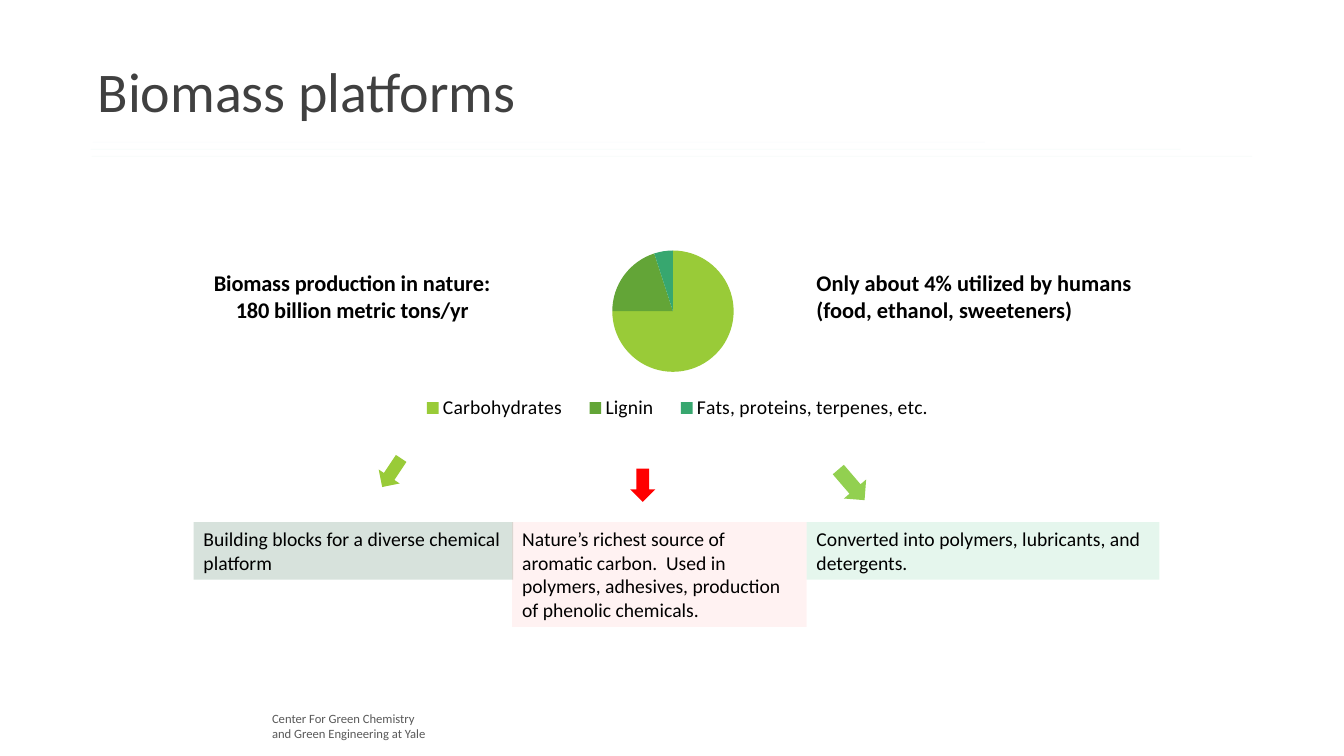
from lxml import etree
from pptx import Presentation
from pptx.chart.data import CategoryChartData
from pptx.dml.color import RGBColor
from pptx.enum.chart import XL_CHART_TYPE, XL_LEGEND_POSITION as LegendPos
from pptx.enum.shapes import MSO_CONNECTOR, MSO_SHAPE
from pptx.enum.text import MSO_ANCHOR, PP_ALIGN
from pptx.oxml.ns import qn
from pptx.util import Inches, Pt

BLACK = RGBColor(0x00, 0x00, 0x00)
DARK_GREY = RGBColor(0x40, 0x40, 0x40)
GREY = RGBColor(0x59, 0x59, 0x59)
LIME = RGBColor(0x99, 0xCB, 0x38)
GREEN = RGBColor(0x63, 0xA5, 0x37)
TEAL = RGBColor(0x37, 0xA7, 0x6F)
AQUA = RGBColor(0x44, 0xC1, 0xA3)
SKY = RGBColor(0x4E, 0xB3, 0xCF)
RED = RGBColor(0xFF, 0x00, 0x00)
LIGHT_GREEN = RGBColor(0x92, 0xD0, 0x50)
EMERALD = RGBColor(0x00, 0xB0, 0x50)
PALE_GREEN = RGBColor(0xD7, 0xE2, 0xDC)
FONT = "Calibri"


def write(shape, text, size, color, bold=False, wrap=True):
    frame = shape.text_frame
    frame.word_wrap = wrap
    frame.text = text
    for para in frame.paragraphs:
        para.alignment = PP_ALIGN.LEFT
        for span in para.runs:
            span.font.name = FONT
            span.font.size = Pt(size)
            span.font.bold = bold
            span.font.color.rgb = color


def place(element, index, **fractions):
    """Give a chart part a manual layout in fractions of the chart."""
    for old in element.findall(qn("c:layout")):
        element.remove(old)
    layout = etree.Element(qn("c:layout"))
    manual = etree.SubElement(layout, qn("c:manualLayout"))
    if element.tag == qn("c:plotArea"):
        etree.SubElement(manual, qn("c:layoutTarget"), val="inner")
    for mode in ("xMode", "yMode"):
        etree.SubElement(manual, qn("c:" + mode), val="edge")
    for name, value in fractions.items():
        etree.SubElement(manual, qn("c:" + name), val=str(value))
    element.insert(index, layout)


deck = Presentation()
deck.slide_width, deck.slide_height = Inches(13.33), Inches(7.5)
page = deck.slides.add_slide(deck.slide_layouts[6])
shapes = page.shapes

footer = shapes.add_textbox(Inches(2.6), Inches(7), Inches(1.86), Inches(0.4))
write(footer, "Center For Green Chemistry\nand Green Engineering at Yale", 9, GREY, wrap=False)

# Very faint rules under the title
for left, right, top, color in [
    (0.92, 9.77, 1.41, SKY), (0.9, 11.71, 1.48, AQUA), (0.91, 12.42, 1.55, TEAL),
]:
    rule = shapes.add_connector(
        MSO_CONNECTOR.STRAIGHT, Inches(left), Inches(top), Inches(right), Inches(top))
    rule.line.color.rgb = color
    rule.line.width = Pt(0.5)
    properties = rule._element.spPr
    etree.SubElement(properties.find(".//" + qn("a:srgbClr")), qn("a:alpha"), val="4000")
    etree.SubElement(properties, qn("a:effectLst"))

title = shapes.add_textbox(Inches(0.87), Inches(0.31), Inches(9), Inches(1.25))
write(title, "Biomass platforms", 40, DARK_GREY)
title.text_frame.vertical_anchor = MSO_ANCHOR.MIDDLE
title.text_frame.paragraphs[0].line_spacing = 0.9

# Pie chart of biomass composition
data = CategoryChartData()
data.categories = ["Carbohydrates", "Lignin", "Fats, proteins, terpenes, etc."]
data.add_series("Series 1", (75, 20, 5))
chart = shapes.add_chart(
    XL_CHART_TYPE.PIE, Inches(1.67), Inches(2.36), Inches(8.42), Inches(2.25), data).chart
chart.font.name = FONT
chart.font.size = Pt(18)
chart.font.color.rgb = BLACK

chart.has_title = True
heading = chart.chart_title
write(heading, "Biomass production in nature:\n180 billion metric tons/yr", 16, BLACK, bold=True)
for para in heading.text_frame.paragraphs:
    para.alignment = PP_ALIGN.CENTER
place(heading._element, 1, x=0.05, y=0.12)

chart.has_legend = True
chart.legend.position = LegendPos.BOTTOM
chart.legend.include_in_layout = False
chart.legend.font.name = FONT
chart.legend.font.size = Pt(14)
chart.legend.font.color.rgb = BLACK
place(chart.legend._element, 1, x=0.28, y=0.68, w=0.64, h=0.14)

pie = chart.plots[0]
pie.vary_by_categories = True
place(pie._element.getparent(), 0, x=0.356, y=0.056, w=0.477, h=0.535)
for index, color in enumerate((LIME, GREEN, TEAL)):
    fill = pie.series[0].points[index].format.fill
    fill.solid()
    fill.fore_color.rgb = color

usage = shapes.add_textbox(Inches(8), Inches(2.62), Inches(3.37), Inches(0.64))
write(usage, "Only about 4% utilized by humans\n(food, ethanol, sweeteners)",
      16, BLACK, bold=True, wrap=False)

for left, top, width, height, rotation, color in [
    (3.76, 4.52, 0.25, 0.34, 33.6, LIME),
    (6.25, 4.65, 0.25, 0.33, 0, RED),
    (8.3, 4.61, 0.29, 0.4, 319.4, LIGHT_GREEN),
]:
    arrow = shapes.add_shape(
        MSO_SHAPE.DOWN_ARROW, Inches(left), Inches(top), Inches(width), Inches(height))
    arrow.rotation = rotation
    arrow.shadow.inherit = False
    arrow.fill.solid()
    arrow.fill.fore_color.rgb = color
    arrow.line.fill.background()

for left, width, height, color, opacity, text in [
    (1.92, 3.17, 0.57, PALE_GREEN, 100, "Building blocks for a diverse chemical platform"),
    (5.08, 2.92, 1.04, RED, 5, "Nature’s richest source of aromatic carbon.  Used in "
     "polymers, adhesives, production of phenolic chemicals."),
    (8, 3.5, 0.57, EMERALD, 10, "Converted into polymers, lubricants, and detergents."),
]:
    box = shapes.add_shape(
        MSO_SHAPE.RECTANGLE, Inches(left), Inches(5.18), Inches(width), Inches(height))
    box.shadow.inherit = False
    box.fill.solid()
    box.fill.fore_color.rgb = color
    box.line.fill.background()
    if opacity < 100:
        tint = box._element.spPr.find(".//" + qn("a:srgbClr"))
        etree.SubElement(tint, qn("a:alpha"), val=str(opacity * 1000))
    write(box, text, 14, BLACK)
    box.text_frame.vertical_anchor = MSO_ANCHOR.TOP

deck.save("out.pptx")
